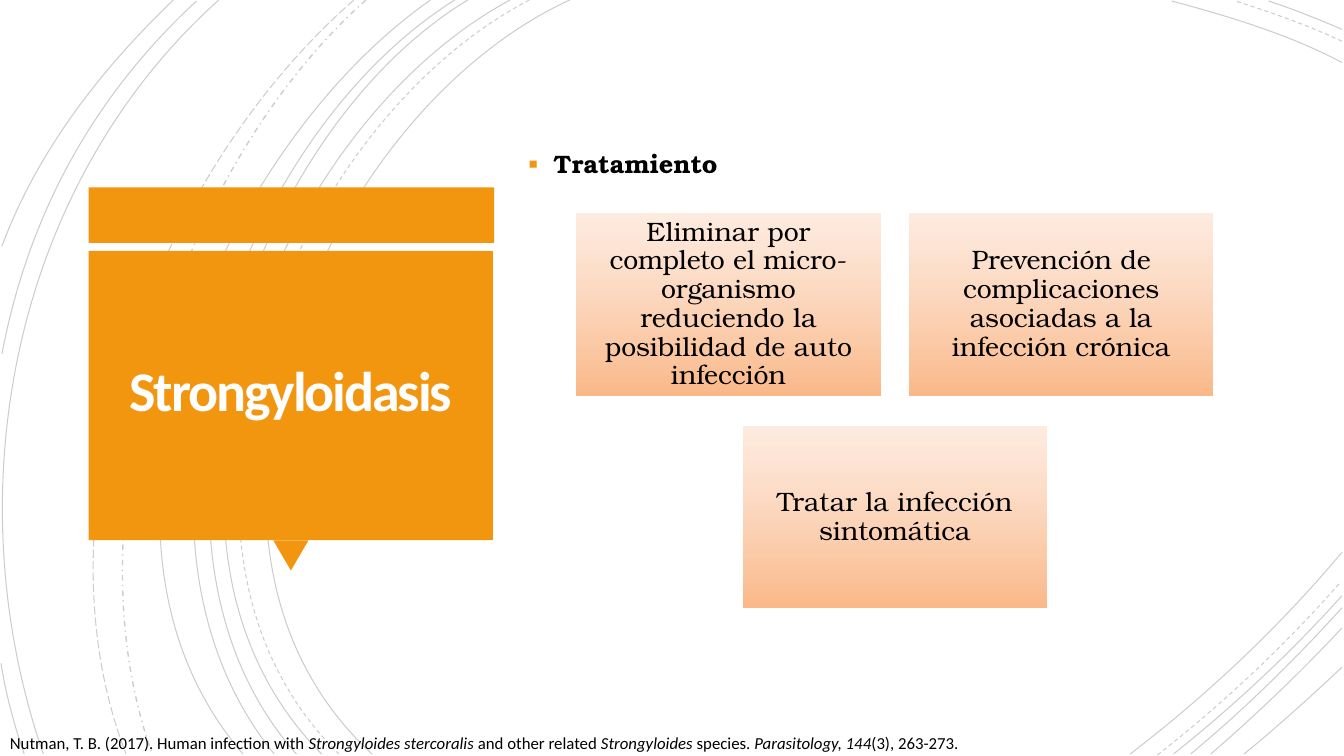
from lxml.etree import SubElement as Sub
from pptx import Presentation
from pptx.dml.color import RGBColor as Rgb
from pptx.enum.dml import MSO_LINE as Dash
from pptx.enum.shapes import MSO_SHAPE as Form
from pptx.enum.text import MSO_ANCHOR as Anchor, MSO_AUTO_SIZE as Fit, PP_ALIGN as Align
from pptx.oxml.ns import qn
from pptx.util import Pt

PX = 9144
ORANGE = "F3960F"
BLACK = "000000"
SERIF = "TeX Gyre Bonum"
SANS = "Calibri"


def tint(color, code):
    color.rgb = Rgb.from_string(code)


def style(item, **vals):
    for key, val in vals.items():
        if key == "color":
            tint(item.color, val)
        else:
            setattr(item, key, val)


deck = Presentation()
style(deck, slide_width=1333 * PX, slide_height=750 * PX)
slide = deck.slides.add_slide(deck.slide_layouts[1])
shapes = slide.shapes
title, body = slide.placeholders

curves = [
    (565, 0, 315, 115, 143, 540, 369, 748, Dash.SOLID),
    (1331, 62, 1278, 34, 1218, 16, 1162, 1, Dash.SOLID),
    (1121, 748, 1197, 690, 1269, 622, 1331, 548, Dash.SOLID),
    (525, 0, 285, 125, 123, 537, 336, 748, Dash.DASH),
    (1331, 41, 1297, 25, 1260, 12, 1225, 1, Dash.DASH),
    (1148, 749, 1213, 698, 1275, 640, 1330, 577, Dash.DASH),
    (506, 0, 270, 127, 110, 537, 319, 748, Dash.SOLID),
    (1331, 29, 1307, 19, 1283, 9, 1258, 1, Dash.SOLID),
    (1164, 748, 1223, 701, 1280, 648, 1331, 591, Dash.SOLID),
    (464, 0, 244, 133, 110, 541, 294, 748, Dash.SOLID),
    (1181, 748, 1234, 704, 1284, 655, 1331, 603, Dash.SOLID),
    (451, 0, 231, 138, 97, 533, 272, 748, Dash.SOLID),
    (1201, 748, 1246, 709, 1290, 667, 1331, 623, Dash.SOLID),
    (427, 0, 217, 147, 53, 529, 241, 748, Dash.SOLID),
    (1234, 748, 1267, 721, 1299, 692, 1331, 662, Dash.SOLID),
    (363, 0, 176, 166, 65, 509, 151, 748, Dash.DASH_DOT),
    (351, 0, 157, 169, 29, 499, 125, 748, Dash.LONG_DASH),
    (217, 0, 11, 185, -46, 490, 43, 748, Dash.SOLID),
    (195, 1, 92, 96, 28, 214, 2, 351, Dash.SOLID),
    (1, 658, 6, 689, 14, 719, 24, 748, Dash.SOLID),
    (172, 0, 100, 69, 37, 150, 2, 244, Dash.SOLID),
]
for *nums, dash in curves:
    start, *rest = zip(nums[::2], nums[1::2])
    pen = shapes.build_freeform(*start, scale=PX)
    pen.add_line_segments(rest, close=False)
    arc = pen.convert_to_shape()
    arc.shadow.inherit = False
    arc.fill.background()
    width = Pt(1) if dash == Dash.DASH_DOT else Pt(0.75)
    style(arc.line, color=BLACK, width=width, dash_style=dash)
    for clr in arc.element.iter(qn("a:srgbClr")):
        Sub(clr, qn("a:alpha"), val="20000")
    steps = list(arc.element.iter(qn("a:lnTo")))
    bend = Sub(steps[0].getparent(), qn("a:cubicBezTo"))
    for step in steps:
        bend.append(step[0])
        step.getparent().remove(step)

for form, turn, *area in [
    (Form.RECTANGLE, 0, 88, 186, 402, 55),
    (Form.ISOSCELES_TRIANGLE, 180, 271, 536, 35, 30),
    (Form.RECTANGLE, 0, 88, 249, 401, 287),
]:
    block = shapes.add_shape(form, *[n * PX for n in area])
    block.rotation = turn
    block.shadow.inherit = False
    block.fill.solid()
    tint(block.fill.fore_color, ORANGE)
    block.line.fill.background()

for holder, area in [(title, (97, 257, 383, 269)), (body, (514, 121, 689, 77))]:
    shapes.element.append(holder.element)
    left, top, width, height = [n * PX for n in area]
    style(holder, left=left, top=top, width=width, height=height)
    style(holder.text_frame, word_wrap=True, auto_size=Fit.NONE,
          vertical_anchor=Anchor.MIDDLE)

pad = 25 * PX
style(title.text_frame, margin_left=pad, margin_right=pad,
      margin_top=pad, margin_bottom=pad)
head = title.text_frame.paragraphs[0]
style(head, alignment=Align.CENTER, line_spacing=0.85)
run = head.add_run()
run.text = "Strongyloidasis"
style(run.font, name=SANS, size=Pt(40), bold=True, color="FFFEFF")
run.font._element.set("spc", "-150")

item = body.text_frame.paragraphs[0]
props = item._p.get_or_add_pPr()
props.set("marL", str(pad))
props.set("indent", str(-pad))
Sub(Sub(props, qn("a:buClr")), qn("a:srgbClr"), val=ORANGE)
Sub(props, qn("a:buSzPct"), val="110000")
Sub(props, qn("a:buFont"), typeface=SANS)
Sub(props, qn("a:buChar"), char="▪")
style(item, alignment=Align.LEFT, line_spacing=1.2, space_before=Pt(0))
run = item.add_run()
run.text = "Tratamiento"
style(run.font, name=SERIF, size=Pt(18), bold=True, color=BLACK)

note = shapes.add_textbox(0, 722 * PX, 1270 * PX, 30 * PX)
style(note.text_frame, word_wrap=True, auto_size=Fit.SHAPE_TO_FIT_TEXT)
cite = note.text_frame.paragraphs[0]
for text, slant in [
    ("Nutman, T. B. (2017). Human infection with ", False),
    ("Strongyloides stercoralis", True),
    (" and other related ", False),
    ("Strongyloides", True),
    (" species. ", False),
    ("Parasitology, 144", True),
    ("(3), 263-273.", False),
]:
    run = cite.add_run()
    run.text = text
    style(run.font, name=SANS, size=Pt(12), italic=slant, color=BLACK)

wide, high, gap = 301, 180, 30
step = wide + gap - 1
inset = 8 * PX
for col, row, text in [
    (0, 0, "Eliminar por completo el micro-organismo reduciendo "
           "la posibilidad de auto infección"),
    (1, 0, "Prevención de complicaciones asociadas a la infección crónica"),
    (0.5, 1, "Tratar la infección sintomática"),
]:
    left, top = 572 + int(col * step), 212 + row * (high + gap + 1)
    card = shapes.add_shape(Form.RECTANGLE, left * PX, top * PX, wide * PX, high * PX)
    card.shadow.inherit = False
    card.line.fill.background()
    card.fill.gradient()
    card.fill.gradient_angle = 270
    for stop, code in zip(card.fill.gradient_stops, ("FDDFCC", "FBB37F")):
        tint(stop.color, code)
    for clr, alpha in zip(card.element.iter(qn("a:srgbClr")), ("60000", "92000")):
        Sub(clr, qn("a:alpha"), val=alpha)
    style(card.text_frame, word_wrap=True, vertical_anchor=Anchor.MIDDLE,
          margin_left=inset, margin_right=inset,
          margin_top=inset, margin_bottom=inset)
    para = card.text_frame.paragraphs[0]
    style(para, alignment=Align.CENTER, line_spacing=0.9)
    run = para.add_run()
    run.text = text
    style(run.font, name=SERIF, size=Pt(19), color=BLACK)

deck.save("out.pptx")
